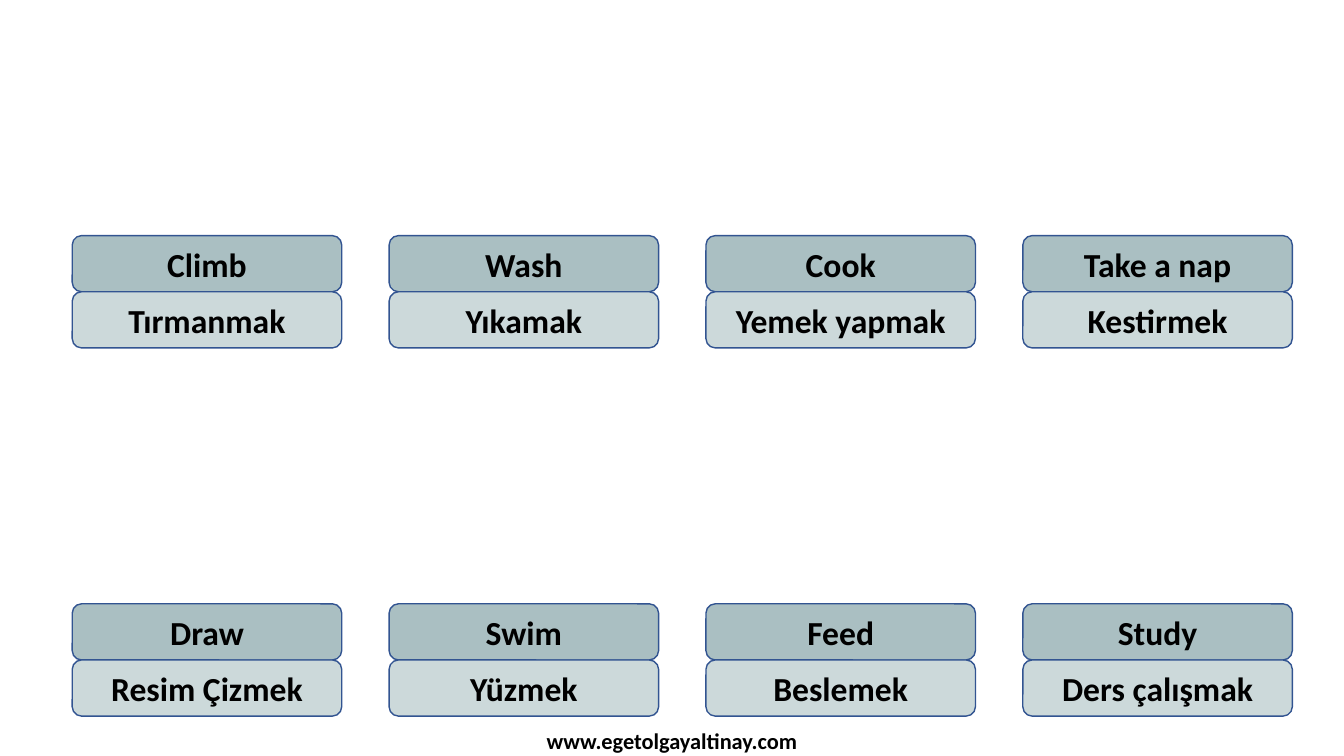
from pptx import Presentation
from pptx import util as u
from pptx.dml.color import RGBColor
from pptx.enum import shapes, text

COLORS = {"english": "AABFC2", "turkish": "CCD9DA", "outline": "325491", "ink": "000000"}
FONT = "Calibri"

VERB_ROWS = [
    [("Climb", "Tırmanmak"), ("Wash", "Yıkamak"),
     ("Cook", "Yemek yapmak"), ("Take a nap", "Kestirmek")],
    [("Draw", "Resim Çizmek"), ("Swim", "Yüzmek"),
     ("Feed", "Beslemek"), ("Study", "Ders çalışmak")],
]
CARD_WIDTH = 192.5


def color(name):
    return RGBColor.from_string(COLORS[name])


def write_centered(shape, words, size):
    shape.text_frame.word_wrap = True
    paragraph = shape.text_frame.paragraphs[0]
    paragraph.alignment = text.PP_ALIGN.CENTER
    run = paragraph.add_run()
    run.text = words
    run.font.name = FONT
    run.font.size = u.Pt(size)
    run.font.bold = True
    run.font.color.rgb = color("ink")


def add_label(slide, words, fill, left, top, width, height):
    label = slide.shapes.add_shape(
        shapes.MSO_SHAPE.ROUNDED_RECTANGLE,
        u.Pt(left), u.Pt(top), u.Pt(width), u.Pt(height))
    label.shadow.inherit = False
    label.fill.solid()
    label.fill.fore_color.rgb = color(fill)
    label.line.color.rgb = color("outline")
    label.line.width = u.Pt(1)
    label.text_frame.vertical_anchor = text.MSO_ANCHOR.MIDDLE
    write_centered(label, words, 24)


def add_verb_row(slide, verbs, left, top, width, height):
    """Spread word pairs evenly, each translation under its verb."""
    step = (width - CARD_WIDTH) / (len(verbs) - 1)
    label_height = height / 2
    for column, (english, turkish) in enumerate(verbs):
        card_left = left + column * step
        add_label(slide, english, "english", card_left, top, CARD_WIDTH, label_height)
        add_label(slide, turkish, "turkish", card_left, top + label_height,
                  CARD_WIDTH, label_height)


def add_footer(slide, left, top, width, height):
    footer = slide.shapes.add_textbox(u.Pt(left), u.Pt(top), u.Pt(width), u.Pt(height))
    write_centered(footer, "www.egetolgayaltinay.com", 16)
    footer.text_frame.auto_size = text.MSO_AUTO_SIZE.SHAPE_TO_FIT_TEXT


def build_vocabulary_slide(presentation):
    slide = presentation.slides.add_slide(presentation.slide_layouts[6])
    # Two rows of word cards
    for row, verbs in enumerate(VERB_ROWS):
        add_verb_row(slide, verbs, 51.6, 168.3 + row * 263, 871.5, 80.2)
    # Web address
    add_footer(slide, 282, 516.2, 396, 26.6)


def main():
    presentation = Presentation()
    presentation.slide_width = u.Pt(960)
    presentation.slide_height = u.Pt(540)
    build_vocabulary_slide(presentation)
    presentation.save("out.pptx")


if __name__ == "__main__":
    main()
